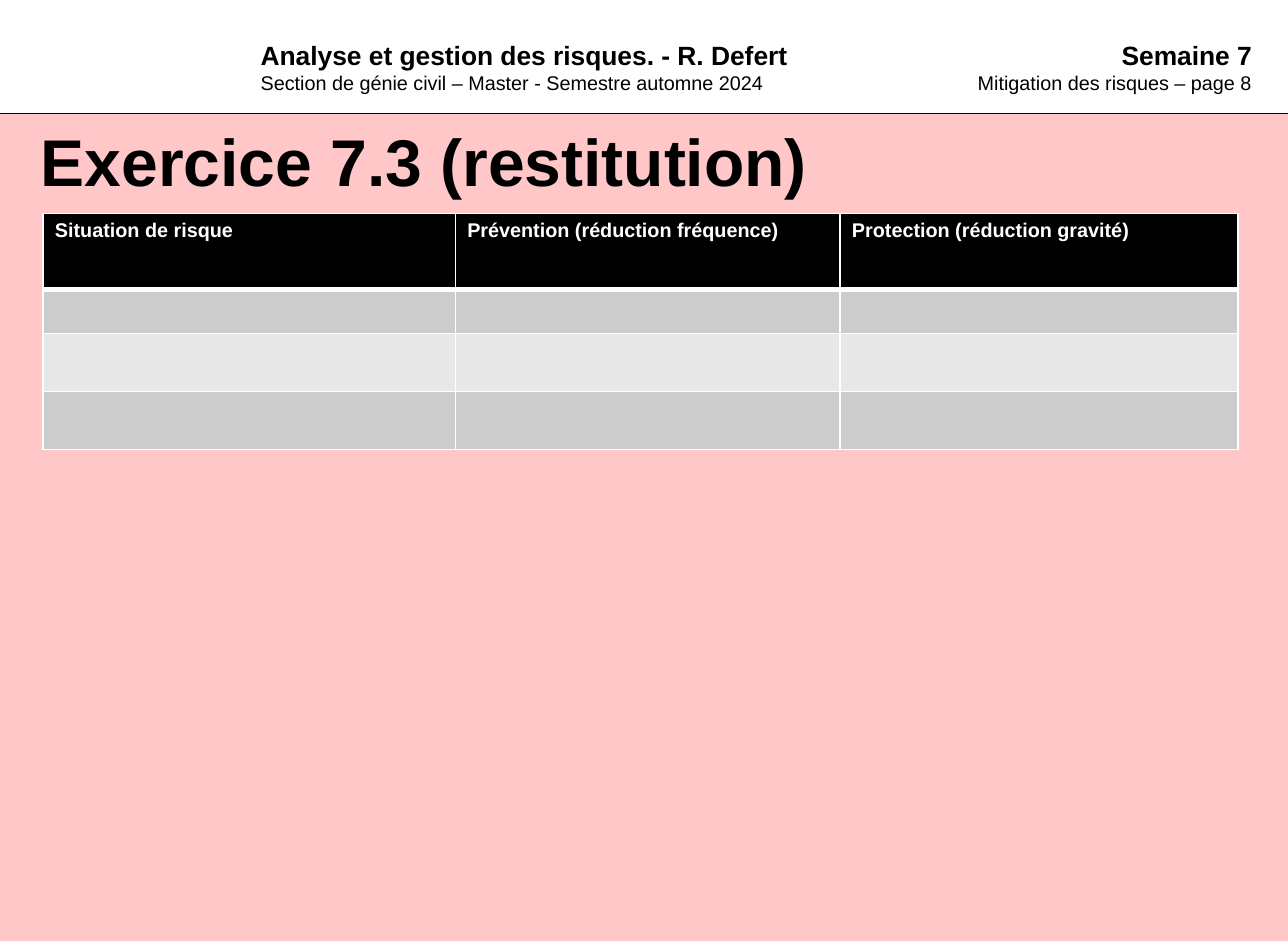
from lxml.etree import SubElement
from pptx import Presentation
from pptx.dml.color import RGBColor
from pptx.enum.shapes import MSO_CONNECTOR, MSO_SHAPE
from pptx.enum.text import MSO_ANCHOR, PP_ALIGN
from pptx.oxml.ns import qn
from pptx.util import Cm, Pt

FONT = "Arial"
COLORS = {
    "background": "FFC7C7",
    "white": "FFFFFF",
    "black": "000000",
    "dark_band": "CCCCCC",
    "light_band": "E7E7E7",
}
PAGE_WIDTH, PAGE_HEIGHT = 27.52, 20.11
HEADER_HEIGHT = 2.43
HEADINGS = [
    "Situation de risque",
    "Prévention (réduction fréquence)",
    "Protection (réduction gravité)",
]
COLUMN_WIDTHS = [8.81, 8.22, 8.5]
ROW_HEIGHTS = [1.63, 0.94, 1.24, 1.24]


def color(name):
    return RGBColor.from_string(COLORS[name])


def paint(filled, name):
    filled.fill.solid()
    filled.fill.fore_color.rgb = color(name)


def style(para, size, bold, name="black"):
    for span in para.runs:
        span.font.name = FONT
        span.font.size = Pt(size)
        span.font.bold = bold
        span.font.color.rgb = color(name)


def add_text(page, left, top, width, height, lines, align=PP_ALIGN.LEFT,
             anchor=MSO_ANCHOR.TOP):
    """Place a text box; lines holds (text, size, bold) for each paragraph."""
    box = page.shapes.add_textbox(Cm(left), Cm(top), Cm(width), Cm(height))
    frame = box.text_frame
    frame.word_wrap = True
    frame.vertical_anchor = anchor
    frame.text = "\n".join(text for text, _, _ in lines)
    for para, (_, size, bold) in zip(frame.paragraphs, lines):
        para.alignment = align
        style(para, size, bold)


def add_header(page, left, top, width, height):
    # White band
    band = page.shapes.add_shape(
        MSO_SHAPE.RECTANGLE, Cm(left), Cm(top), Cm(width), Cm(height))
    band.shadow.inherit = False
    paint(band, "white")
    band.line.fill.background()

    # Rule under the band
    bottom = Cm(top + height)
    rule = page.shapes.add_connector(
        MSO_CONNECTOR.STRAIGHT, Cm(left), bottom, Cm(left + width), bottom)
    rule.line.color.rgb = color("black")
    rule.line.width = Pt(0.75)
    SubElement(rule._element.spPr, qn("a:effectLst"))

    # Course on the left, week on the right
    add_text(page, left + 5.32, top + 0.71, 15.42, 1.45, [
        ("Analyse et gestion des risques. - R. Defert", 16, True),
        ("Section de génie civil – Master - Semestre automne 2024", 12, False),
    ])
    add_text(page, left + width - 8.52, top + 0.71, 8, 1.45, [
        ("Semaine 7", 16, True),
        ("Mitigation des risques – page 8", 12, False),
    ], PP_ALIGN.RIGHT)


def set_borders(cell, widths):
    """Draw white borders; widths maps L, R, T, B to points."""
    properties = cell._tc.get_or_add_tcPr()
    for index, (side, width) in enumerate(widths.items()):
        border = SubElement(properties, qn(f"a:ln{side}"), w=str(Pt(width)))
        fill = SubElement(border, qn("a:solidFill"))
        SubElement(fill, qn("a:srgbClr"), val=COLORS["white"])
        properties.insert(index, border)


def add_risk_table(page, left, top):
    frame = page.shapes.add_table(
        len(ROW_HEIGHTS), len(COLUMN_WIDTHS), Cm(left), Cm(top),
        Cm(sum(COLUMN_WIDTHS)), Cm(sum(ROW_HEIGHTS)))
    table = frame.table
    for column, width in zip(table.columns, COLUMN_WIDTHS):
        column.width = Cm(width)

    for index, height in enumerate(ROW_HEIGHTS):
        table.rows[index].height = Cm(height)
        for heading, cell in zip(HEADINGS, table.rows[index].cells):
            para = cell.text_frame.paragraphs[0]
            if index == 0:
                para.text = heading
                style(para, 12, True, "white")
                paint(cell, "black")
            else:
                # Small empty line keeps the row at its set height
                SubElement(para._p, qn("a:endParaRPr"), sz="1200")
                paint(cell, "dark_band" if index % 2 else "light_band")
            set_borders(cell, {
                "L": 1,
                "R": 1,
                "T": 3 if index == 1 else 1,
                "B": 3 if index == 0 else 1,
            })


def build_exercise(page):
    page.background.fill.solid()
    page.background.fill.fore_color.rgb = color("background")
    add_header(page, 0, 0, PAGE_WIDTH, HEADER_HEIGHT)
    add_text(page, 0.62, HEADER_HEIGHT, 22.83, 1.99,
             [("Exercice 7.3 (restitution)", 40, True)],
             anchor=MSO_ANCHOR.MIDDLE)
    add_risk_table(page, 0.92, 4.56)


def main():
    deck = Presentation()
    deck.slide_width = Cm(PAGE_WIDTH)
    deck.slide_height = Cm(PAGE_HEIGHT)
    build_exercise(deck.slides.add_slide(deck.slide_layouts[6]))
    deck.save("out.pptx")


if __name__ == "__main__":
    main()
